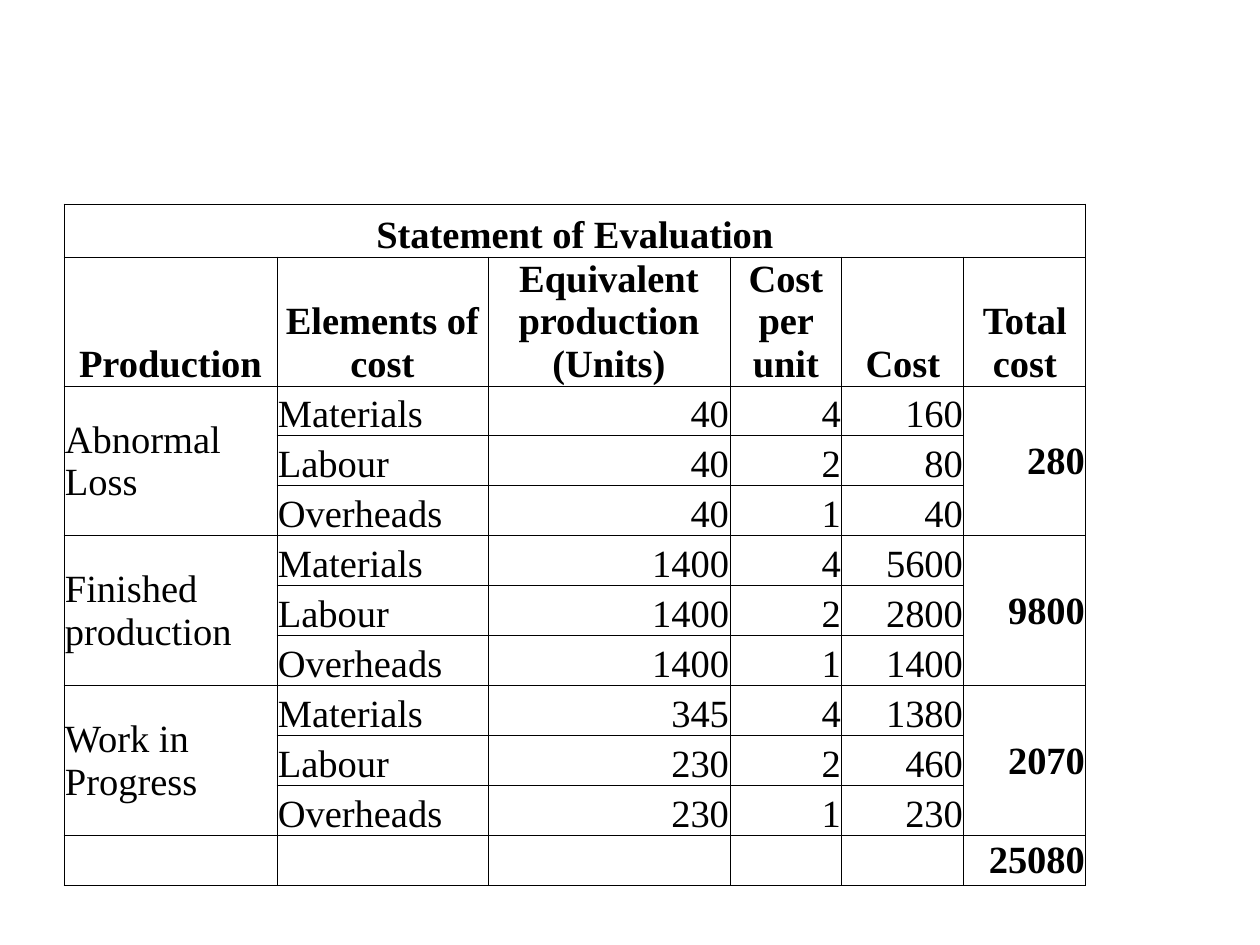
from lxml.etree import SubElement
from pptx import Presentation
from pptx.dml.color import RGBColor
from pptx.enum.text import MSO_ANCHOR, PP_ALIGN
from pptx.oxml.ns import qn
from pptx.util import Pt

# Content
TITLE = "Statement of Evaluation"
HEADINGS = ["Production", "Elements of cost", "Equivalent production (Units)",
            "Cost per unit", "Cost", "Total cost"]
GROUPS = [
    ("Abnormal Loss", 280, [("Materials", 40, 4, 160),
                            ("Labour", 40, 2, 80),
                            ("Overheads", 40, 1, 40)]),
    ("Finished production", 9800, [("Materials", 1400, 4, 5600),
                                   ("Labour", 1400, 2, 2800),
                                   ("Overheads", 1400, 1, 1400)]),
    ("Work in Progress", 2070, [("Materials", 345, 4, 1380),
                                ("Labour", 230, 2, 460),
                                ("Overheads", 230, 1, 230)]),
]
GRAND_TOTAL = 25080

# Layout in px and style
PX = 914400 // 126
COLUMN_WIDTHS = [213, 211, 242, 112, 122, 122]
ROW_HEIGHTS = [53, 129] + [50] * (sum(len(items) for _, _, items in GROUPS) + 1)
LEFT, TOP = 64, 204
COLORS = {"ink": "000000"}
FONT = "Times New Roman"
LAST = len(COLUMN_WIDTHS) - 1


def write(cell, text, align=PP_ALIGN.LEFT, anchor=MSO_ANCHOR.BOTTOM, bold=False):
    cell.vertical_anchor = anchor
    para = cell.text_frame.paragraphs[0]
    para.alignment = align
    span = para.add_run()
    span.text = str(text)
    span.font.name = FONT
    span.font.size = Pt(22)
    span.font.bold = bold
    span.font.color.rgb = RGBColor.from_string(COLORS["ink"])


def format_cell(cell):
    cell.margin_left = cell.margin_right = cell.margin_top = PX
    cell.margin_bottom = 0
    properties = cell._tc.get_or_add_tcPr()
    for side in ("a:lnL", "a:lnR", "a:lnT", "a:lnB"):
        line = SubElement(properties, qn(side), w=str(Pt(0.5)))
        fill = SubElement(line, qn("a:solidFill"))
        SubElement(fill, qn("a:srgbClr"), val=COLORS["ink"])
    cell.fill.background()


# Slide
deck = Presentation()
deck.slide_width, deck.slide_height = 1260 * PX, 945 * PX
page = deck.slides.add_slide(deck.slide_layouts[6])

# Table grid
table = page.shapes.add_table(
    len(ROW_HEIGHTS), len(COLUMN_WIDTHS), LEFT * PX, TOP * PX,
    sum(COLUMN_WIDTHS) * PX, sum(ROW_HEIGHTS) * PX).table
table.first_row = table.horz_banding = False
for column, width in zip(table.columns, COLUMN_WIDTHS):
    column.width = width * PX
for row, height in zip(table.rows, ROW_HEIGHTS):
    row.height = height * PX
for cell in table.iter_cells():
    format_cell(cell)

# Title and headings
table.cell(0, 0).merge(table.cell(0, LAST))
write(table.cell(0, 0), TITLE, align=PP_ALIGN.CENTER, bold=True)
for index, heading in enumerate(HEADINGS):
    write(table.cell(1, index), heading, align=PP_ALIGN.CENTER, bold=True)

# Production groups
top_row = 2
for production, total, items in GROUPS:
    for column in (0, LAST):
        table.cell(top_row, column).merge(table.cell(top_row + len(items) - 1, column))
    write(table.cell(top_row, 0), production, anchor=MSO_ANCHOR.MIDDLE)
    write(table.cell(top_row, LAST), total, align=PP_ALIGN.RIGHT,
          anchor=MSO_ANCHOR.MIDDLE, bold=True)
    for offset, (element, *numbers) in enumerate(items):
        write(table.cell(top_row + offset, 1), element)
        for column, number in enumerate(numbers, start=2):
            write(table.cell(top_row + offset, column), number, align=PP_ALIGN.RIGHT)
    top_row += len(items)

# Grand total
write(table.cell(top_row, LAST), GRAND_TOTAL, align=PP_ALIGN.RIGHT,
      anchor=MSO_ANCHOR.MIDDLE, bold=True)

deck.save("out.pptx")
